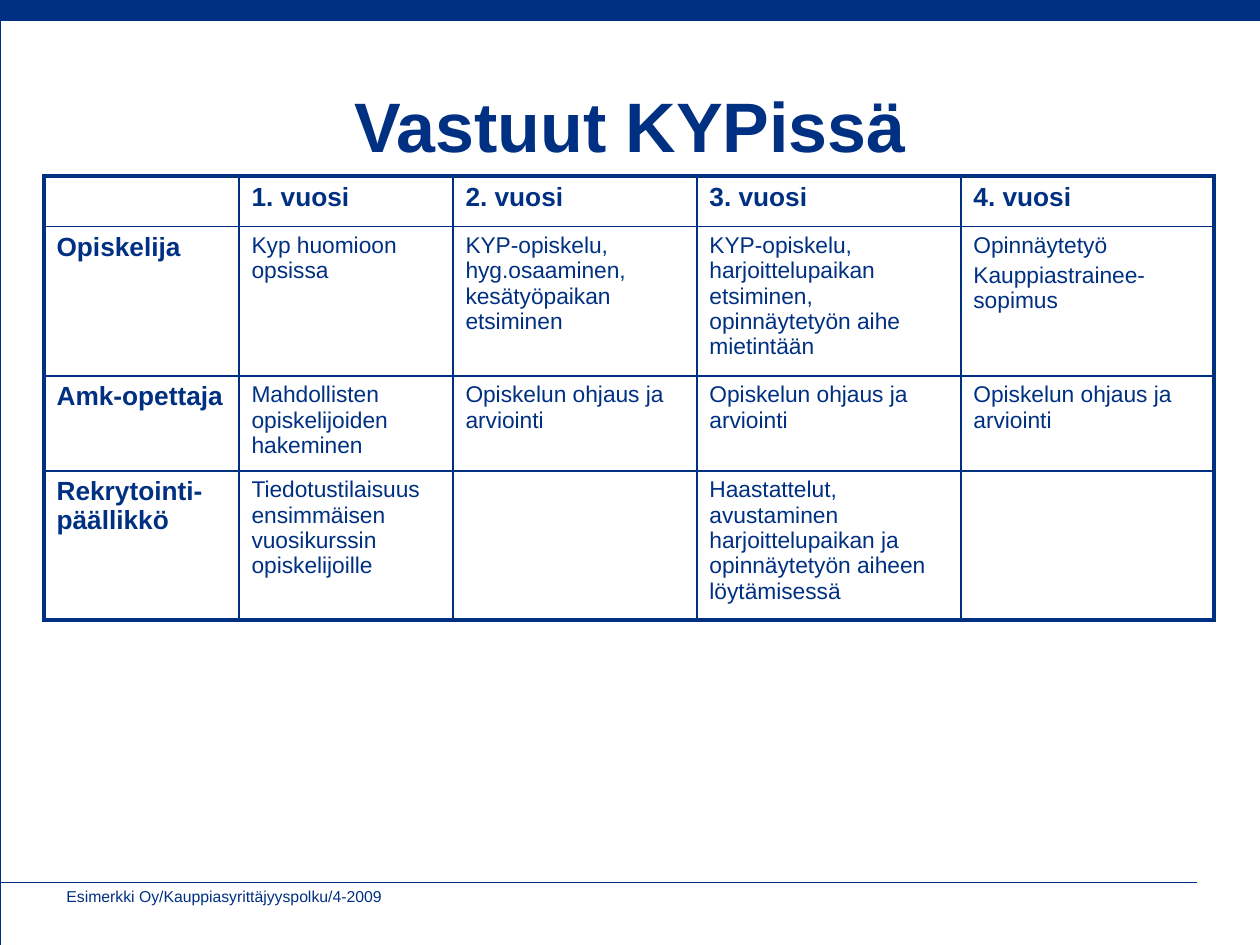
from lxml import etree
from pptx import Presentation
from pptx.dml.color import RGBColor
from pptx.enum.shapes import MSO_CONNECTOR, MSO_SHAPE
from pptx.enum.text import MSO_ANCHOR, PP_ALIGN
from pptx.oxml.ns import qn
from pptx.util import Pt

RECTANGLE = MSO_SHAPE.RECTANGLE
STRAIGHT = MSO_CONNECTOR.STRAIGHT
MIDDLE = MSO_ANCHOR.MIDDLE
LEFT, CENTER = PP_ALIGN.LEFT, PP_ALIGN.CENTER

NAVY = RGBColor(0x00, 0x30, 0x82)
FONT = "Arial"
EMU_PER_PX = 914400 / 126
SLIDE_W, SLIDE_H = 1260, 945

TITLE = "Vastuut KYPissä"
FOOTER = "Esimerkki Oy/Kauppiasyrittäjyyspolku/4-2009"
YEARS = ["1. vuosi", "2. vuosi", "3. vuosi", "4. vuosi"]
GUIDANCE = "Opiskelun ohjaus ja arviointi"
DUTIES = {
    "Opiskelija": [
        "Kyp huomioon opsissa",
        "KYP-opiskelu, hyg.osaaminen, kesätyöpaikan etsiminen",
        "KYP-opiskelu, harjoittelupaikan etsiminen, opinnäytetyön aihe mietintään",
        "Opinnäytetyö\nKauppiastrainee-sopimus",
    ],
    "Amk-opettaja": [
        "Mahdollisten opiskelijoiden hakeminen",
        GUIDANCE, GUIDANCE, GUIDANCE,
    ],
    "Rekrytointi-päällikkö": [
        "Tiedotustilaisuus ensimmäisen vuosikurssin opiskelijoille",
        "",
        "Haastattelut, avustaminen harjoittelupaikan ja opinnäytetyön aiheen löytämisessä",
        "",
    ],
}
TABLE_LEFT, TABLE_TOP = 44, 176
COLUMN_WIDTHS = [195, 214, 244, 264, 253]
ROW_HEIGHTS = [49, 149, 95, 149]
OUTER_PT, INNER_PT = 2.25, 1


def px(*lengths):
    return [round(length * EMU_PER_PX) for length in lengths]


def write(frame, text, size, bold=False, align=LEFT):
    """Fill a text frame, one paragraph per line of text."""
    for number, line in enumerate(text.split("\n")):
        paragraph = frame.add_paragraph() if number else frame.paragraphs[0]
        paragraph.alignment = align
        if number:
            paragraph.space_before = Pt(size * 0.2)
        if line:
            run = paragraph.add_run()
            run.text = line
            run.font.name = FONT
            run.font.size = Pt(size)
            run.font.bold = bold
            run.font.color.rgb = NAVY


def add_text(slide, box, text, size, **style):
    frame = slide.shapes.add_textbox(*px(*box)).text_frame
    frame.word_wrap = True
    frame.vertical_anchor = MIDDLE
    write(frame, text, size, **style)


def add_rectangle(slide, box):
    rectangle = slide.shapes.add_shape(RECTANGLE, *px(*box))
    rectangle.shadow.inherit = False
    return rectangle


def set_borders(cell, widths):
    """Draw left, right, top and bottom borders, widths in points."""
    properties = cell._tc.get_or_add_tcPr()
    for position, (side, width) in enumerate(zip("LRTB", widths)):
        border = etree.Element(qn(f"a:ln{side}"), w=str(Pt(width)))
        fill = etree.SubElement(border, qn("a:solidFill"))
        etree.SubElement(fill, qn("a:srgbClr"), val=str(NAVY))
        properties.insert(position, border)


def add_frame(slide):
    band = add_rectangle(slide, (0, 0, SLIDE_W, 21))
    band.fill.solid()
    band.fill.fore_color.rgb = NAVY
    band.line.fill.background()

    outline = add_rectangle(slide, (0, 0, SLIDE_W, SLIDE_H))
    outline.fill.background()
    outline.line.color.rgb = NAVY
    outline.line.width = Pt(0.1)

    add_text(slide, (54, 880, 387, 32), FOOTER, 9)
    footer_rule = slide.shapes.add_connector(STRAIGHT, *px(1197, 882, 0, 882))
    footer_rule.line.color.rgb = NAVY
    footer_rule.line.width = Pt(0.25)
    etree.SubElement(footer_rule._element.spPr, qn("a:effectLst"))


def add_duties(slide):
    rows = [["", *YEARS]] + [[role, *duties] for role, duties in DUTIES.items()]
    last_row, last_column = len(rows) - 1, len(YEARS)
    box = px(TABLE_LEFT, TABLE_TOP, sum(COLUMN_WIDTHS), sum(ROW_HEIGHTS))
    table = slide.shapes.add_table(len(rows), last_column + 1, *box).table
    table.first_row = table.horz_banding = False
    for column, width in zip(table.columns, px(*COLUMN_WIDTHS)):
        column.width = width
    for row, height in zip(table.rows, px(*ROW_HEIGHTS)):
        row.height = height
    for r, texts in enumerate(rows):
        for c, text in enumerate(texts):
            cell = table.cell(r, c)
            cell.fill.background()
            heading = r == 0 or c == 0
            write(cell.text_frame, text, 15 if heading else 13, bold=heading)
            on_edge = (c == 0, c == last_column, r == 0, r == last_row)
            set_borders(cell, [OUTER_PT if edge else INNER_PT for edge in on_edge])


def main():
    presentation = Presentation()
    presentation.slide_width, presentation.slide_height = px(SLIDE_W, SLIDE_H)
    slide = presentation.slides.add_slide(presentation.slide_layouts[6])
    add_frame(slide)
    add_text(slide, (94, 46, 1072, 158), TITLE, 40, bold=True, align=CENTER)
    add_duties(slide)
    presentation.save("out.pptx")


if __name__ == "__main__":
    main()
